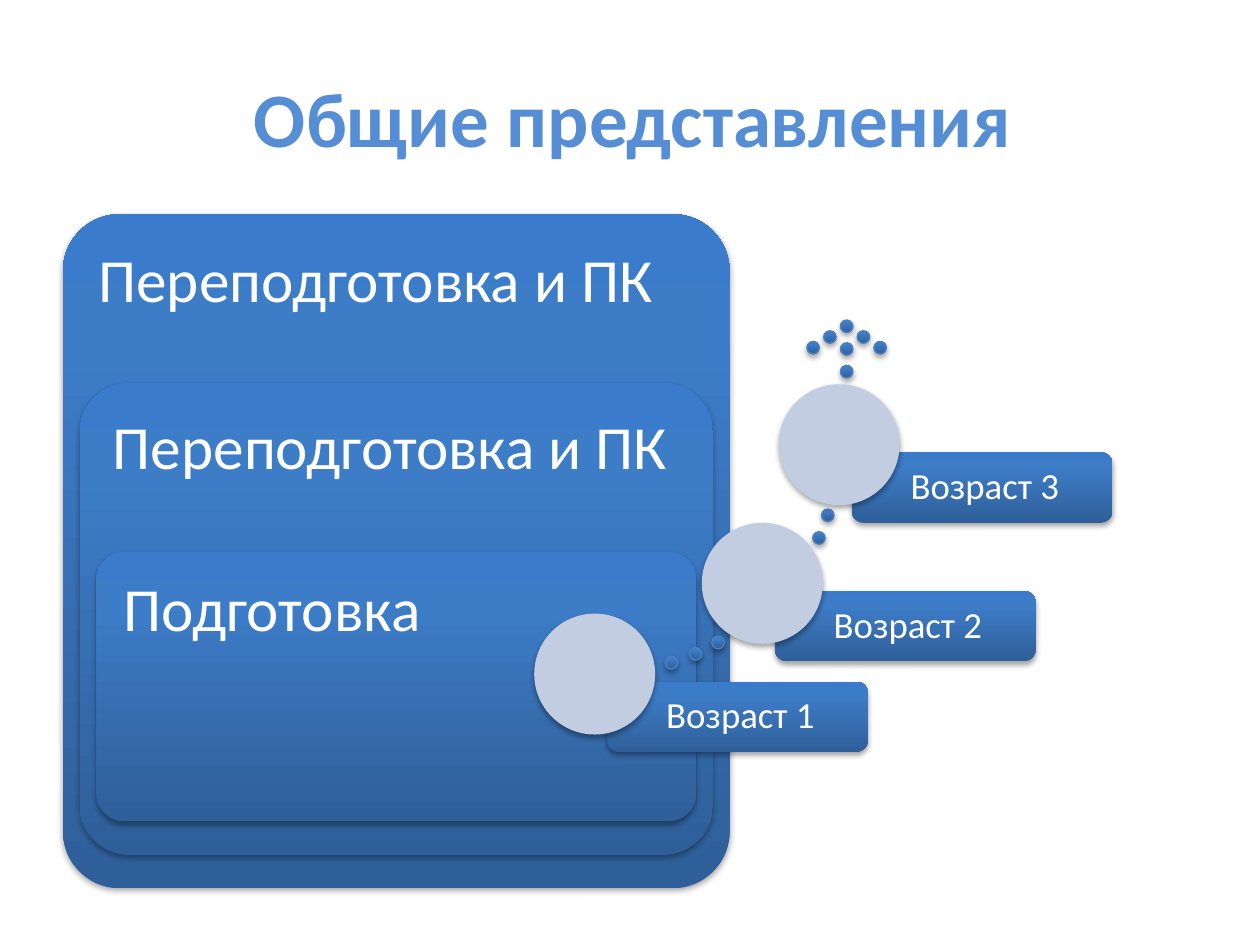
"""Build a slide of nested training panels beside an ascending path of ages."""
from lxml.etree import SubElement
from pptx import Presentation
from pptx.dml.color import RGBColor
from pptx.enum.shapes import MSO_SHAPE
from pptx.enum.text import MSO_ANCHOR, PP_ALIGN
from pptx.oxml.ns import qn
from pptx.util import Inches, Pt

prs = Presentation()
prs.slide_width, prs.slide_height = Inches(10), Inches(7.5)
s = prs.slides.add_slide(prs.slide_layouts[6])
col, row = prs.slide_width / 100, prs.slide_height / 75
STOPS = [(0, "2F5F99"), (80, "3D7CC7"), (100, "3A7CCB")]


def add_box(kind, x, y, w, h, color=None):
    sp = s.shapes.add_shape(kind, int(x * col), int(y * row), int(w * col), int(h * row))
    if color:
        sp.fill.solid()
        sp.fill.fore_color.rgb = RGBColor.from_string(color)
    else:
        sp.fill.gradient()
        sp.fill.gradient_angle = 90
        stops = sp.element.spPr.find(".//" + qn("a:gsLst"))
        for stop in list(stops):
            stops.remove(stop)
        for pos, value in STOPS:
            stop = SubElement(stops, qn("a:gs"), pos=str(pos * 1000))
            SubElement(stop, qn("a:srgbClr"), val=value)
    sp.line.fill.background()
    sp.shadow.inherit = False
    effects = sp.element.spPr.find(qn("a:effectLst"))
    shadow = SubElement(effects, qn("a:outerShdw"), blurRad="40000", dist="23000",
                        dir="5400000", rotWithShape="0")
    black = SubElement(shadow, qn("a:srgbClr"), val="000000")
    SubElement(black, qn("a:alpha"), val="35000")
    return sp


def write(sp, text, size, color, anchor, align, left, inset):
    tf = sp.text_frame
    tf.word_wrap = True
    tf.vertical_anchor = anchor
    tf.margin_left = Inches(left)
    tf.margin_top = tf.margin_right = tf.margin_bottom = Inches(inset)
    p = tf.paragraphs[0]
    p.text = text
    p.alignment = align
    r = p.runs[0]
    r.font.name, r.font.size = "Calibri", Pt(size)
    r.font.color.rgb = RGBColor.from_string(color)
    return p


title = s.shapes.add_textbox(int(5 * col), int(3 * row), int(90 * col), int(12.5 * row))
p = write(title, "Общие представления", 44, "558ED5", MSO_ANCHOR.MIDDLE, PP_ALIGN.CENTER, 0.1, 0.05)
p.runs[0].font.bold = True

panels = [("Переподготовка и ПК", 0.085), ("Переподготовка и ПК", 0.105), ("Подготовка", 0.105)]
for i, (text, radius) in enumerate(panels):
    sp = add_box(MSO_SHAPE.ROUNDED_RECTANGLE, 5 + 1.32 * i, 17 + 13.4 * i,
                 52.9 - 2.64 * i, 53.5 - 16.05 * i)
    sp.adjustments[0] = radius
    p = write(sp, text, 35, "FFFFFF", MSO_ANCHOR.TOP, PP_ALIGN.LEFT, 0.15, 0.15)
    p.line_spacing = 0.9

dots = [(56.5, 50.5), (54.7, 51.4), (52.8, 52.1), (65.2, 40.4), (64.5, 42.2)]
dots += [(66.7 + 1.33 * k, 25.4 + 0.85 * abs(k)) for k in range(-2, 3)]
dots += [(66.7, 27.2), (66.7, 29)]
for x, y in dots:
    sp = add_box(MSO_SHAPE.OVAL, x, y, 1, 1)
    sp.line.color.rgb = RGBColor.from_string("4F81BD")
    sp.line.width = Pt(0.75)

for i, (x, y) in enumerate([(42.4, 48.7), (55.7, 41.5), (61.8, 30.5)], 1):
    sp = add_box(MSO_SHAPE.ROUNDED_RECTANGLE, x + 5.8, y + 5.4, 20.7, 5.6)
    p = write(sp, f"Возраст {i}", 21, "FFFFFF", MSO_ANCHOR.MIDDLE, PP_ALIGN.LEFT, 0.44, 0.09)
    p.line_spacing = 0.9
    add_box(MSO_SHAPE.OVAL, x, y, 9.6, 9.6, "C2CDE1")

prs.save("out.pptx")
